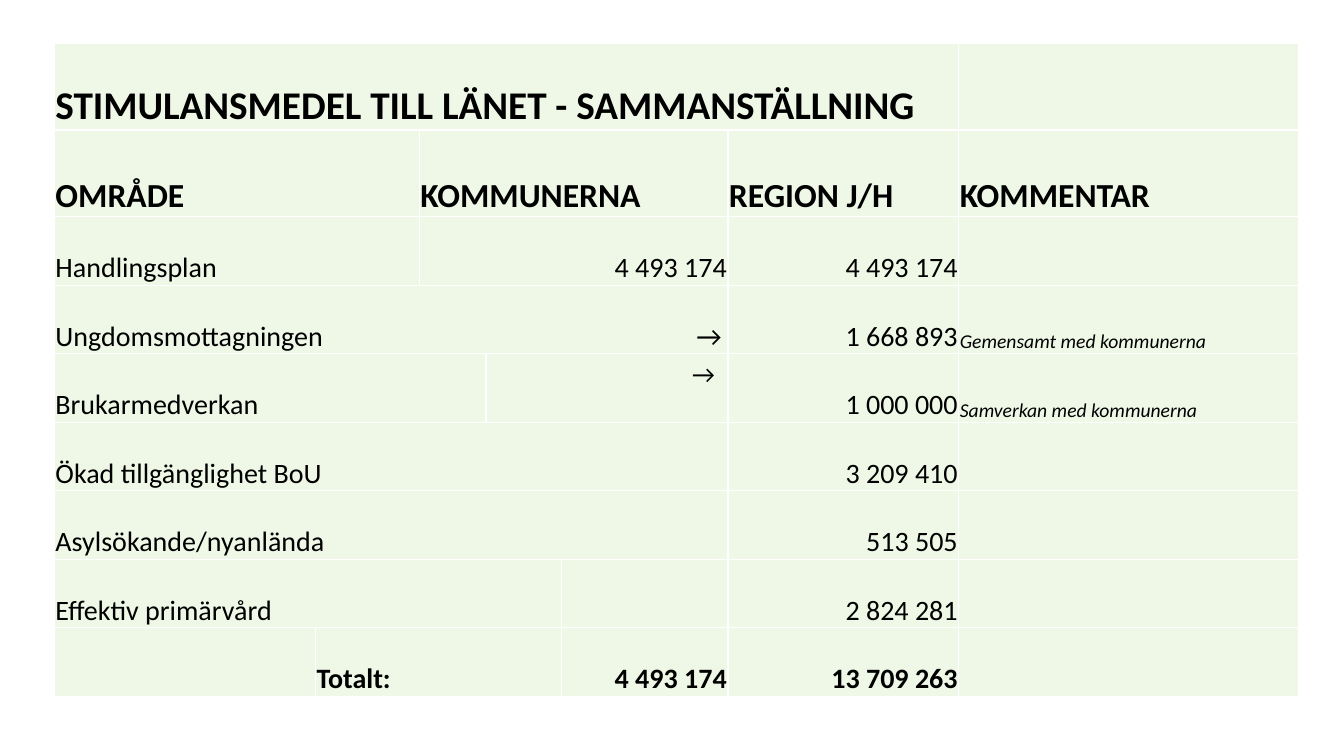
"""Build a slide with the summary table of county funding."""
from lxml import etree
from pptx import Presentation
from pptx.dml.color import RGBColor
from pptx.enum.text import MSO_ANCHOR, PP_ALIGN
from pptx.oxml.ns import qn
from pptx.util import Inches, Pt

BOTTOM, TOP = MSO_ANCHOR.BOTTOM, MSO_ANCHOR.TOP
LEFT, RIGHT = PP_ALIGN.LEFT, PP_ALIGN.RIGHT


class Theme:
    """Colours, font and type sizes of the slide."""

    font = "Calibri"
    ink = RGBColor.from_string("000000")
    fill = RGBColor.from_string("EFF8E7")
    rule = "FFFFFF"
    rule_width = Pt(1)
    title, head, body, arrow, note = Pt(28), Pt(24), Pt(20), Pt(18), Pt(14)


TITLE = {"size": Theme.title, "bold": True}
HEAD = {"size": Theme.head, "bold": True}
BODY = {"size": Theme.body, "bold": False}
TOTAL = {"size": Theme.body, "bold": True}
NOTE = {"size": Theme.note, "bold": False, "italic": True}
ARROW = {"size": Theme.arrow, "bold": False}
INSET = {"margin_left": Inches(0.01), "margin_right": Inches(0.01),
         "margin_top": Inches(0.01), "margin_bottom": 0,
         "vertical_anchor": BOTTOM}
RAISED = {"vertical_anchor": TOP, "margin_top": Inches(0.06),
          "margin_right": Inches(0.13)}

COLS = [2.59, 1.03, 0.66, 0.75, 1.65, 2.29, 3.37]
HEIGHTS = [0.86] * 2 + [0.68] * 7
REGION, COMMENT = 5, 6
TAB = 6.61

ROWS = [
    [(0, 6, "STIMULANSMEDEL TILL LÄNET - SAMMANSTÄLLNING", TITLE, LEFT)],
    [(0, 2, "OMRÅDE", HEAD, LEFT), (2, 3, "KOMMUNERNA", HEAD, LEFT),
     (REGION, 1, "REGION J/H", HEAD, LEFT),
     (COMMENT, 1, "KOMMENTAR", HEAD, LEFT)],
    [(0, 2, "Handlingsplan", BODY, LEFT), (2, 3, "4 493 174", BODY, RIGHT),
     (REGION, 1, "4 493 174", BODY, RIGHT)],
    [(0, 5, "Ungdomsmottagningen\t→", BODY, LEFT),
     (REGION, 1, "1 668 893", BODY, RIGHT),
     (COMMENT, 1, "Gemensamt med kommunerna", NOTE, LEFT)],
    [(0, 3, "Brukarmedverkan", BODY, LEFT), (3, 2, "→", ARROW, RIGHT),
     (REGION, 1, "1 000 000", BODY, RIGHT),
     (COMMENT, 1, "Samverkan med kommunerna", NOTE, LEFT)],
    [(0, 5, "Ökad tillgänglighet BoU", BODY, LEFT),
     (REGION, 1, "3 209 410", BODY, RIGHT)],
    [(0, 5, "Asylsökande/nyanlända", BODY, LEFT),
     (REGION, 1, "513 505", BODY, RIGHT)],
    [(0, 4, "Effektiv primärvård", BODY, LEFT),
     (REGION, 1, "2 824 281", BODY, RIGHT)],
    [(1, 3, "Totalt:", TOTAL, LEFT), (4, 1, "4 493 174", TOTAL, RIGHT),
     (REGION, 1, "13 709 263", TOTAL, RIGHT)],
]


def apply(item, values):
    """Set each attribute of an item from a dict."""
    for name, value in values.items():
        setattr(item, name, value)


class Deck:
    """Hold the theme and the current slide."""

    def __init__(self, theme):
        self.theme = theme
        self.show = Presentation()
        apply(self.show, {"slide_width": Inches(13.33),
                          "slide_height": Inches(7.5)})
        self.slide = self.show.slides.add_slide(self.show.slide_layouts[6])

    def table(self, left, top, cols, heights, rows):
        """Add a table of merged, filled and ruled cells."""
        grid = self.slide.shapes.add_table(
            len(heights), len(cols), Inches(left), Inches(top),
            Inches(sum(cols)), Inches(sum(heights))).table
        apply(grid, {"first_row": False, "horz_banding": False})
        for col, width in zip(grid.columns, cols):
            col.width = Inches(width)
        for row, height in zip(grid.rows, heights):
            row.height = Inches(height)
        for line, parts in enumerate(rows):
            for start, span, text, style, align in parts:
                cell = grid.cell(line, start)
                if span > 1:
                    cell.merge(grid.cell(line, start + span - 1))
                self.label(cell, text, style, align)
        for cell in grid.iter_cells():
            if not cell.is_spanned:
                self.paint(cell)

    def label(self, cell, text, style, align):
        """Put styled text in a cell."""
        apply(cell, INSET)
        if style is ARROW:
            apply(cell, RAISED)
        para = cell.text_frame.paragraphs[0]
        para.alignment = align
        if "\t" in text:
            self.tab(para, TAB)
        run = para.add_run()
        run.text = text
        apply(run.font, {"name": self.theme.font, **style})
        run.font.color.rgb = self.theme.ink

    def tab(self, para, place):
        """Give a paragraph one right tab stop."""
        stops = etree.SubElement(para._p.get_or_add_pPr(), qn("a:tabLst"))
        etree.SubElement(stops, qn("a:tab"), pos=str(Inches(place)), algn="r")

    def paint(self, cell):
        """Rule and fill a cell."""
        props = cell._tc.get_or_add_tcPr()
        for side in "LRTB":
            line = etree.SubElement(props, qn("a:ln" + side),
                                    w=str(self.theme.rule_width))
            solid = etree.SubElement(line, qn("a:solidFill"))
            etree.SubElement(solid, qn("a:srgbClr"), val=self.theme.rule)
        cell.fill.solid()
        cell.fill.fore_color.rgb = self.theme.fill


def main():
    """Build and save the slide."""
    deck = Deck(Theme)
    deck.table(0.54, 0.43, COLS, HEIGHTS, ROWS)
    deck.show.save("out.pptx")


if __name__ == "__main__":
    main()
